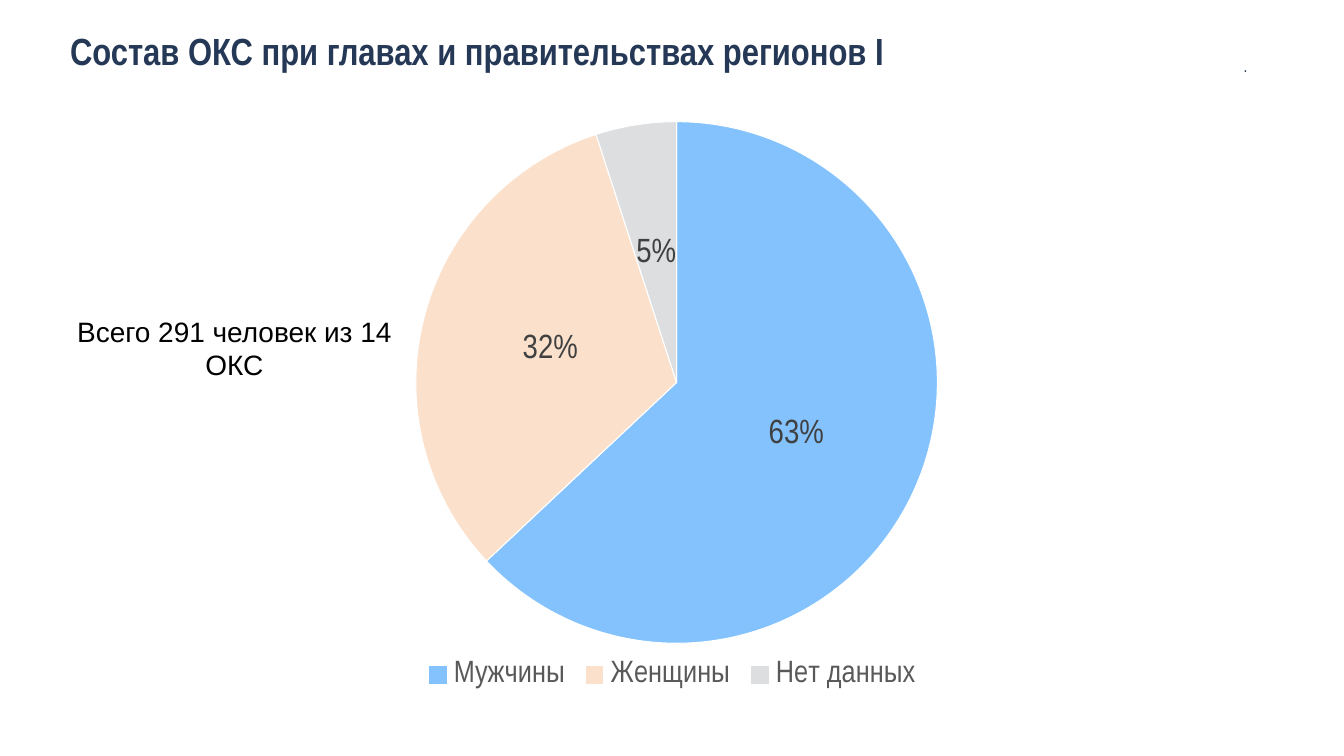
from lxml import etree
from pptx import Presentation
from pptx.chart.data import CategoryChartData
from pptx.dml.color import RGBColor
from pptx.enum.chart import XL_CHART_TYPE, XL_LABEL_POSITION, XL_LEGEND_POSITION
from pptx.enum.text import MSO_ANCHOR, MSO_AUTO_SIZE, PP_ALIGN
from pptx.oxml import parse_xml
from pptx.util import Cm, Pt

PIE = XL_CHART_TYPE.PIE
CENTER_LABELS = XL_LABEL_POSITION.CENTER
LEGEND_BOTTOM = XL_LEGEND_POSITION.BOTTOM
TOP, MIDDLE = MSO_ANCHOR.TOP, MSO_ANCHOR.MIDDLE
LEFT, CENTER, RIGHT = PP_ALIGN.LEFT, PP_ALIGN.CENTER, PP_ALIGN.RIGHT
NO_AUTOFIT = MSO_AUTO_SIZE.NONE
CHART_NS = "http://schemas.openxmlformats.org/drawingml/2006/chart"

COLORS = {
    "navy": "253957",
    "black": "000000",
    "white": "FFFFFF",
    "legend": "595959",
    "label": "404040",
    "Мужчины": "83C2FD",
    "Женщины": "FBE1CC",
    "Нет данных": "DCDEE0",
}
SHARES = {"Мужчины": 63, "Женщины": 32, "Нет данных": 5}


def style_font(font, size, color, name="Arial Narrow", bold=False):
    font.name = name
    font.size = Pt(size)
    font.bold = bold
    font.color.rgb = RGBColor.from_string(COLORS[color])


def fill_text(shape, text, anchor, align):
    frame = shape.text_frame
    frame.text = text
    frame.word_wrap = True
    frame.auto_size = NO_AUTOFIT
    frame.vertical_anchor = anchor
    frame.paragraphs[0].alignment = align
    return frame


prs = Presentation()
prs.slide_width = Cm(67.74)
prs.slide_height = Cm(38.1)
slide = prs.slides.add_slide(prs.slide_layouts[5])

title = slide.shapes.title
title.left, title.top, title.width, title.height = Cm(3.33), Cm(1.4), Cm(62.94), Cm(5.46)
heading = fill_text(title, "Состав ОКС при главах и правительствах регионов I", TOP, LEFT)
heading.margin_left = heading.margin_right = Cm(0.2)
heading.margin_top = heading.margin_bottom = 0
style_font(heading.paragraphs[0].runs[0].font, 54, "navy", bold=True)

dot = slide.shapes.add_textbox(Cm(31.5), Cm(2.62), Cm(31.57), Cm(1.42))
dot_text = fill_text(dot, ".", MIDDLE, RIGHT)
dot_text.margin_left = dot_text.margin_right = Cm(0.2)
dot_text.margin_top = dot_text.margin_bottom = Cm(0.2)
style_font(dot_text.paragraphs[0].runs[0].font, 24, "navy")

composition = CategoryChartData()
composition.categories = list(SHARES)
composition.add_series("Series 1", list(SHARES.values()))
chart = slide.shapes.add_chart(
    PIE, Cm(11.58), Cm(5.84), Cm(44.6), Cm(29.21), composition
).chart
chart.has_title = False
style_font(chart.font, 10, "black")

chart.has_legend = True
chart.legend.position = LEGEND_BOTTOM
chart.legend.include_in_layout = False
style_font(chart.legend.font, 44, "legend")

pie = chart.plots[0]
pie.vary_by_categories = True
for index, category in enumerate(SHARES):
    slice_format = pie.series[0].points[index].format
    slice_format.fill.solid()
    slice_format.fill.fore_color.rgb = RGBColor.from_string(COLORS[category])
    slice_format.line.color.rgb = RGBColor.from_string(COLORS["white"])
    slice_format.line.width = Pt(1.5)

pie.has_data_labels = True
percentages = pie.data_labels
percentages.show_percentage = True
percentages.show_value = False
percentages.number_format = "0%"
percentages.number_format_is_linked = False
percentages.position = CENTER_LABELS
style_font(percentages.font, 48, "label")

plot_area = chart.plots[0]._element.getparent()
for old_layout in plot_area.findall(f"{{{CHART_NS}}}layout"):
    plot_area.remove(old_layout)
layout = parse_xml(f'<c:layout xmlns:c="{CHART_NS}"><c:manualLayout/></c:layout>')
for tag, value in (
    ("layoutTarget", "inner"), ("xMode", "edge"), ("yMode", "edge"),
    ("x", "0.21"), ("y", "0.01"), ("w", "0.59"), ("h", "0.9"),
):
    etree.SubElement(layout[0], f"{{{CHART_NS}}}{tag}").set("val", value)
plot_area.insert(0, layout)

total = slide.shapes.add_textbox(Cm(3.35), Cm(15.72), Cm(16.92), Cm(3.68))
total_text = fill_text(total, "Всего 291 человек из 14 ОКС", TOP, CENTER)
style_font(total_text.paragraphs[0].runs[0].font, 40, "black", name="Arial")

prs.save("out.pptx")
